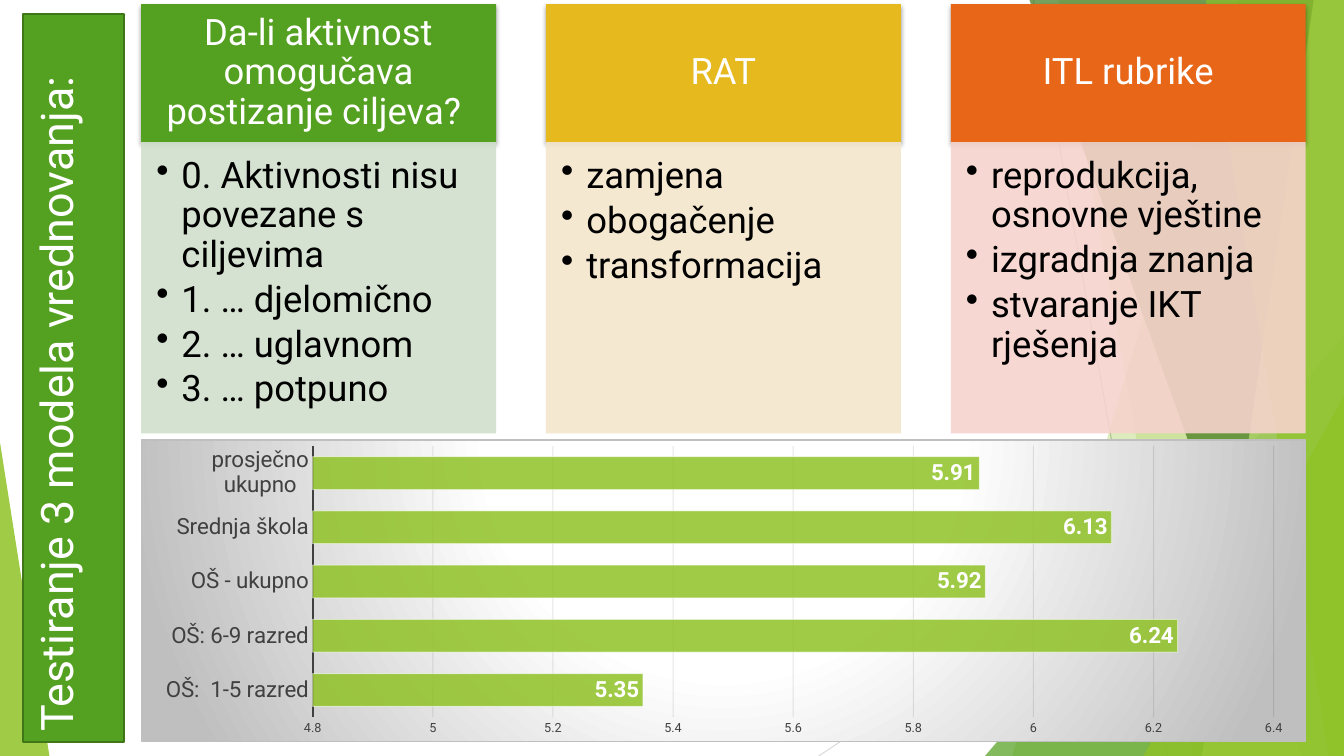
import pptx
import pptx.chart.data
import pptx.dml.color
import pptx.enum.chart
import pptx.enum.dml
import pptx.enum.shapes
import pptx.enum.text
import pptx.oxml
import pptx.oxml.ns
import pptx.util

Inches, Pt = pptx.util.Inches, pptx.util.Pt
RGBColor = pptx.dml.color.RGBColor
SHAPES = pptx.enum.shapes.MSO_SHAPE
ANCHOR = pptx.enum.text.MSO_ANCHOR
ALIGN = pptx.enum.text.PP_ALIGN
qn = pptx.oxml.ns.qn
NAMESPACES = pptx.oxml.ns.nsdecls("a", "c")

FONT = "Roboto"
WHITE = RGBColor(0xFF, 0xFF, 0xFF)
BLACK = RGBColor(0, 0, 0)
LIME = RGBColor(0x90, 0xC2, 0x26)
PALE_LIME = RGBColor(0xC0, 0xE4, 0x74)
GREEN = RGBColor(0x54, 0xA0, 0x21)
DARK_GREEN = RGBColor(0x3F, 0x78, 0x19)
GOLD = RGBColor(0xE6, 0xB9, 0x1E)
ORANGE = RGBColor(0xE7, 0x66, 0x18)
PALE_GREEN = RGBColor(0xD1, 0xDF, 0xCD)
PALE_GOLD = RGBColor(0xF5, 0xE6, 0xCD)
PALE_ORANGE = RGBColor(0xF6, 0xD3, 0xCC)
GRAY = RGBColor(0xBF, 0xBF, 0xBF)
LIGHT_GRAY = RGBColor(0xD9, 0xD9, 0xD9)
DARK_GRAY = RGBColor(0x40, 0x40, 0x40)
GRID = RGBColor(0x0D, 0x0D, 0x0D)

# Content
TITLE = "Testiranje 3 modela vrednovanja:"
MODELS = [
    ("Da-li aktivnost omogučava postizanje ciljeva? ", GREEN, PALE_GREEN,
     ["0. Aktivnosti nisu povezane s ciljevima", "1. … djelomično",
      "2. … uglavnom", "3. … potpuno"]),
    ("RAT", GOLD, PALE_GOLD, ["zamjena", "obogačenje", "transformacija"]),
    ("ITL rubrike", ORANGE, PALE_ORANGE,
     ["reprodukcija, osnovne vještine", "izgradnja znanja", "stvaranje IKT rješenja"]),
]
SCORES = [("OŠ:  1-5 razred", 5.35), ("OŠ: 6-9 razred", 6.24), ("OŠ - ukupno", 5.92),
          ("Srednja škola", 6.13), ("prosječno ukupno", 5.91)]

# Background: lines, bands (top left, bottom left, reaching the right edge), triangles
WIDTH, HEIGHT = 13.33, 7.5
LINES = [(10.25, 0, 11.58, HEIGHT, GRAY), (WIDTH, 4.03, 8.12, HEIGHT, LIGHT_GRAY)]
FACETS = [
    ("band", (12.28, 10.04), LIME, 30),
    ("band", (10.5, 11.83), LIME, 20),
    ("triangle", (9.77, 3.33, 3.56, 4.17, 1), GREEN, 72),
    ("band", (10.21, 12.91), DARK_GREEN, 70),
    ("band", (13.03, 11.92), PALE_LIME, 70),
    ("band", (11.96, 13.18), LIME, 65),
    ("triangle", (11.34, 3.93, 1.99, 3.57, 1), LIME, 80),
    ("triangle", (0, 4.39, 0.49, 3.11, 0), LIME, 85),
]

# Layout
LEFT, RIGHT = 1.4, 12.95
CARD_WIDTH, CARD_TOP, HEADER_HEIGHT, LIST_HEIGHT = 3.52, 0.04, 1.37, 2.89
CARD_STEP = (RIGHT - LEFT - CARD_WIDTH) / (len(MODELS) - 1)
CHART_TOP, CHART_HEIGHT = 4.36, 3


def paint(fill, color, opacity=100):
    fill.solid()
    fill.fore_color.rgb = color
    if opacity < 100:
        for element in fill._xPr.iter(qn("a:srgbClr")):
            alpha = element.makeelement(qn("a:alpha"), {"val": str(opacity * 1000)})
            element.append(alpha)


def style_shape(shape, color, opacity=100):
    shape.shadow.inherit = False
    paint(shape.fill, color, opacity)
    shape.line.fill.background()


def style_font(font, size, color, bold=None):
    font.name, font.size, font.bold = FONT, Pt(size), bold
    font.color.rgb = color


def add_card_part(left, top, height, color, opacity, margins):
    shape = slide.shapes.add_shape(SHAPES.RECTANGLE, Inches(left), Inches(top),
                                   Inches(CARD_WIDTH), Inches(height))
    style_shape(shape, color, opacity)
    frame = shape.text_frame
    frame.word_wrap = True
    (frame.margin_left, frame.margin_top,
     frame.margin_right, frame.margin_bottom) = map(Inches, margins)
    return shape


def add_background():
    for x1, y1, x2, y2, color in LINES:
        line = slide.shapes.add_connector(pptx.enum.shapes.MSO_CONNECTOR.STRAIGHT,
                                          Inches(x1), Inches(y1), Inches(x2), Inches(y2))
        line.line.color.rgb, line.line.width = color, Pt(0.75)
        properties = line._element.spPr
        properties.append(properties.makeelement(qn("a:effectLst"), {}))
    for kind, geometry, color, opacity in FACETS:
        if kind == "band":
            top_x, bottom_x = geometry
            builder = slide.shapes.build_freeform(Inches(top_x), 0)
            corners = [(WIDTH, 0), (WIDTH, HEIGHT), (bottom_x, HEIGHT)]
            builder.add_line_segments([(Inches(x), Inches(y)) for x, y in corners])
            facet = builder.convert_to_shape()
        else:
            *box, apex = geometry
            facet = slide.shapes.add_shape(SHAPES.ISOSCELES_TRIANGLE, *map(Inches, box))
            facet.adjustments[0] = apex
        style_shape(facet, color, opacity)


def add_card(left, heading, color, pale, items):
    header = add_card_part(left, CARD_TOP, HEADER_HEIGHT, color, 100, (0.2, 0.12, 0.2, 0.12))
    header._element.spPr.find(qn("a:effectLst")).append(pptx.oxml.parse_xml(
        f'<a:outerShdw {NAMESPACES} blurRad="38100" dist="25400" dir="5400000" rotWithShape="0">'
        '<a:srgbClr val="000000"><a:alpha val="35000"/></a:srgbClr></a:outerShdw>'))
    header.text_frame.vertical_anchor = ANCHOR.MIDDLE
    paragraph = header.text_frame.paragraphs[0]
    paragraph.text, paragraph.alignment, paragraph.line_spacing = heading, ALIGN.CENTER, 0.9
    style_font(paragraph.font, 26, WHITE)

    body = add_card_part(left, CARD_TOP + HEADER_HEIGHT, LIST_HEIGHT, pale, 90,
                         (0.15, 0.15, 0.2, 0.23))
    frame = body.text_frame
    frame.vertical_anchor = ANCHOR.TOP
    frame.text = "\n".join(items)
    for paragraph in frame.paragraphs:
        paragraph.alignment, paragraph.line_spacing = ALIGN.LEFT, 0.9
        paragraph.space_after = Pt(4)
        style_font(paragraph.font, 26, BLACK)
        properties = paragraph._p.get_or_add_pPr()
        properties.set("marL", str(Inches(0.25)))
        properties.set("indent", str(-Inches(0.25)))
        bullet = properties.makeelement(qn("a:buChar"), {"char": "•"})
        properties.find(qn("a:spcAft")).addnext(bullet)


def add_score_chart():
    data = pptx.chart.data.CategoryChartData()
    data.categories = [name for name, _ in SCORES]
    data.add_series("Series 1", [score for _, score in SCORES])
    chart = slide.shapes.add_chart(
        pptx.enum.chart.XL_CHART_TYPE.BAR_CLUSTERED, Inches(LEFT), Inches(CHART_TOP),
        Inches(RIGHT - LEFT), Inches(CHART_HEIGHT), data).chart
    chart.has_legend = chart.has_title = False
    style_font(chart.font, 10, BLACK)

    # Bars and labels
    plot = chart.plots[0]
    plot.gap_width, plot.vary_by_categories = 65, False
    bars = plot.series[0].format
    paint(bars.fill, LIME, 85)
    paint(bars.line.fill, WHITE, 50)
    bars.line.width = Pt(0.75)
    plot.has_data_labels = True
    labels = plot.data_labels
    labels.show_value = True
    labels.position = pptx.enum.chart.XL_LABEL_POSITION.INSIDE_END
    style_font(labels.font, 16, WHITE, True)

    # Axes
    categories, values = chart.category_axis, chart.value_axis
    for axis, size in ((categories, 16), (values, 9)):
        axis.major_tick_mark = axis.minor_tick_mark = pptx.enum.chart.XL_TICK_MARK.NONE
        style_font(axis.tick_labels.font, size, DARK_GRAY)
    categories.format.line.color.rgb = DARK_GRAY
    categories.format.line.width = Pt(1.5)
    values.minimum_scale, values.maximum_scale, values.major_unit = 4.8, 6.4, 0.2
    values.format.line.fill.background()
    grid = values.major_gridlines.format.line
    paint(grid.fill, GRID, 10)
    grid.width = Pt(0.75)

    # Plot position and chart background
    area = chart._chartSpace.chart.plotArea
    for old in area.findall(qn("c:layout")):
        area.remove(old)
    position = {"x": 0.147, "y": 0.02, "w": 0.826, "h": 0.9}
    area.insert(0, pptx.oxml.parse_xml(
        f'<c:layout {NAMESPACES}><c:manualLayout><c:layoutTarget val="inner"/>'
        '<c:xMode val="edge"/><c:yMode val="edge"/>'
        + "".join(f'<c:{key} val="{value}"/>' for key, value in position.items())
        + "</c:manualLayout></c:layout>"))
    stops = "".join(f'<a:gs pos="{place * 1000}"><a:srgbClr val="{color}"/></a:gs>'
                    for place, color in ((0, WHITE), (39, WHITE), (100, GRAY)))
    chart._chartSpace.chart.addnext(pptx.oxml.parse_xml(
        f'<c:spPr {NAMESPACES}><a:gradFill><a:gsLst>{stops}</a:gsLst><a:path path="circle">'
        '<a:fillToRect l="50000" t="-80000" r="50000" b="180000"/></a:path></a:gradFill>'
        f'<a:ln w="9525"><a:solidFill><a:srgbClr val="{GRAY}"/></a:solidFill></a:ln></c:spPr>'))


def add_title():
    title = slide.shapes.title
    title.left, title.top, title.width, title.height = map(Inches, (-2.88, 3.25, 7.22, 1))
    title.rotation = 270
    paint(title.fill, GREEN)
    title.line.color.rgb, title.line.width = RGBColor(0x3E, 0x76, 0x18), Pt(1.5)
    frame = title.text_frame
    frame.text, frame.word_wrap = TITLE, True
    frame.auto_size = pptx.enum.text.MSO_AUTO_SIZE.NONE
    frame.vertical_anchor = ANCHOR.TOP
    frame.paragraphs[0].alignment = ALIGN.LEFT
    style_font(frame.paragraphs[0].font, 32, WHITE)
    slide.shapes._spTree.append(title._element)  # bring in front of the background


presentation = pptx.Presentation()
presentation.slide_width, presentation.slide_height = Inches(WIDTH), Inches(HEIGHT)
slide = presentation.slides.add_slide(presentation.slide_layouts[5])
add_background()
for index, model in enumerate(MODELS):
    add_card(LEFT + index * CARD_STEP, *model)
add_title()
add_score_chart()
presentation.save("out.pptx")
